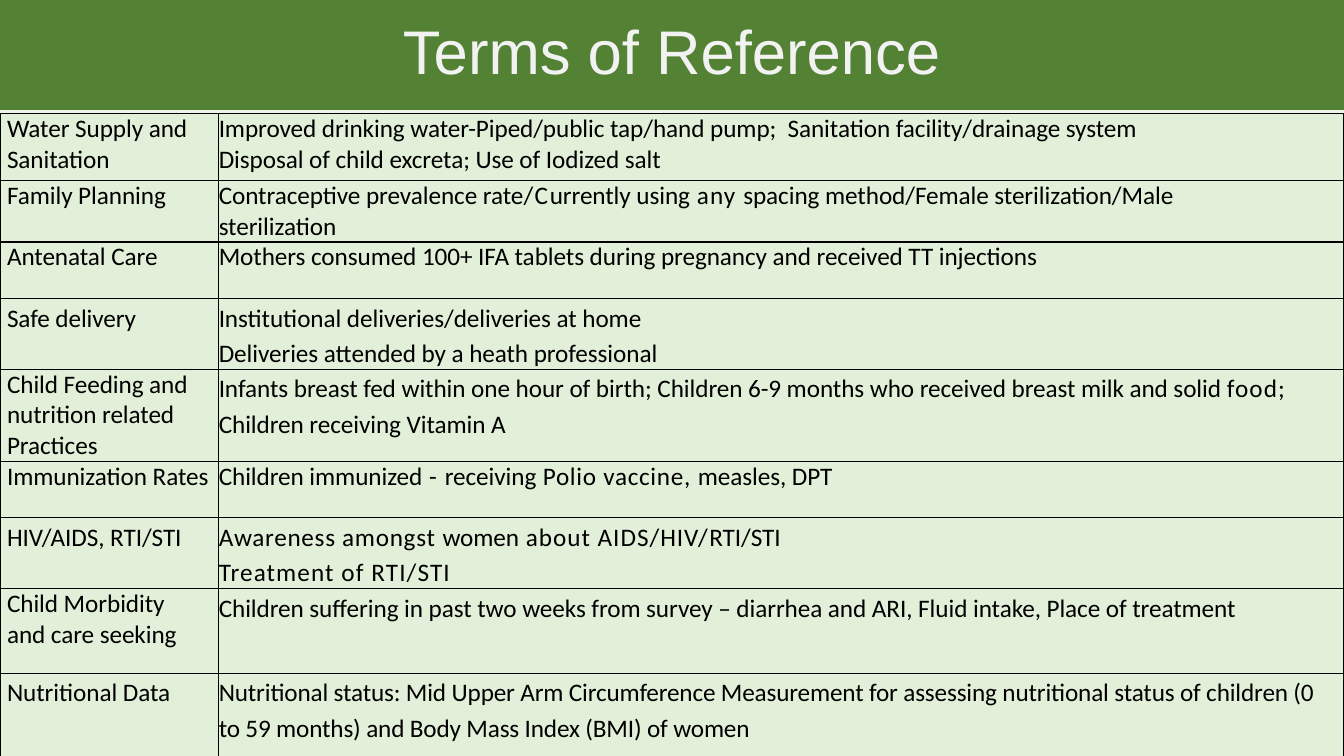
from dataclasses import dataclass
from typing import Any

from lxml.etree import SubElement
from pptx import Presentation
from pptx.dml.color import RGBColor
from pptx.enum.text import MSO_ANCHOR, PP_ALIGN
from pptx.oxml.ns import qn
from pptx.util import Emu, Inches, Pt

GREEN = RGBColor(0x54, 0x82, 0x35)
PALE = RGBColor(0xE2, 0xF0, 0xD9)
MIST = RGBColor(0xED, 0xF5, 0xE7)
WHITE = RGBColor(0xF2, 0xF2, 0xF2)
BLACK = RGBColor(0, 0, 0)

COLS, ROWS = 1333, 750
UNIT = Inches(0.01)
LABEL = 217
TOP = 113
INDENT = 7
LOOSE = 1.15


@dataclass(frozen=True)
class Span:
    text: str
    gap: float = -0.05


@dataclass(frozen=True)
class Cell:
    lines: tuple[tuple[Span, ...], ...]
    lead: float = 1.0
    pad: int = 0


@dataclass(frozen=True)
class Row:
    high: int
    label: Cell
    terms: Cell


def grid(count: int) -> Emu:
    return Emu(UNIT * count)


def plain(*texts: str, lead: float = 1.0, pad: int = 0, gap: float = -0.05) -> Cell:
    return Cell(tuple((Span(text, gap),) for text in texts), lead, pad)


def style(item: Any, form: dict[str, Any]) -> None:
    for name, value in form.items():
        setattr(item, name, value)


def paint(item: Any, color: RGBColor) -> None:
    item.fill.solid()
    item.fill.fore_color.rgb = color


def edge(cell: Any) -> None:
    props = cell._tc.get_or_add_tcPr()
    for side in ("lnL", "lnR", "lnT", "lnB"):
        line = SubElement(props, qn(f"a:{side}"), w=str(Pt(1)))
        fill = SubElement(line, qn("a:solidFill"))
        SubElement(fill, qn("a:srgbClr"), val=str(BLACK))


def write(box: Any, cell: Cell, left: int) -> None:
    edge(box)
    paint(box, PALE)
    style(box, {
        "margin_left": grid(left), "margin_right": grid(cell.pad),
        "margin_top": 0, "margin_bottom": 0, "vertical_anchor": MSO_ANCHOR.TOP,
    })
    frame = box.text_frame
    for spot, line in enumerate(cell.lines):
        para = frame.add_paragraph() if spot else frame.paragraphs[0]
        para.line_spacing = cell.lead
        for span in line:
            run = para.add_run()
            run.text = span.text
            style(run.font, {"name": "Calibri", "size": Pt(18)})
            run.font.color.rgb = BLACK
            run.font._element.set("spc", str(round(span.gap * 100)))


def head(slide: Any, text: str) -> None:
    title = slide.shapes.title
    style(title, {"left": 0, "top": 0, "width": grid(COLS), "height": grid(109)})
    paint(title, GREEN)
    frame = title.text_frame
    style(frame, {"text": text, "vertical_anchor": MSO_ANCHOR.MIDDLE, "word_wrap": True})
    para = frame.paragraphs[0]
    style(para, {"alignment": PP_ALIGN.CENTER, "line_spacing": 0.9})
    style(para.runs[0].font, {"name": "Arial", "size": Pt(44), "bold": False})
    para.runs[0].font.color.rgb = WHITE


def chart(slide: Any, rows: tuple[Row, ...]) -> None:
    high = sum(row.high for row in rows)
    table = slide.shapes.add_table(
        len(rows), 2, 0, grid(TOP), grid(COLS), grid(high)
    ).table
    style(table, {"first_row": False, "horz_banding": False})
    for spot, wide in enumerate((LABEL, COLS - LABEL)):
        table.columns[spot].width = grid(wide)
    for spot, row in enumerate(rows):
        table.rows[spot].height = grid(row.high)
        write(table.cell(spot, 0), row.label, INDENT)
        write(table.cell(spot, 1), row.terms, 0)


TERMS = (
    Row(66, plain("Water Supply and Sanitation"), plain(
        "Improved drinking water-Piped/public tap/hand pump;  Sanitation facility/drainage system",
        "Disposal of child excreta; Use of Iodized salt")),
    Row(55, plain("Family Planning"), Cell(((
        Span("Contraceptive prevalence rate"), Span("/C", 1.1), Span("urrently using"),
        Span(" any ", 0.8),
        Span("spacing method/Female sterilization/Male sterilization")),), pad=70)),
    Row(56, plain("Antenatal Care"), plain(
        "Mothers consumed 100+ IFA tablets during pregnancy and received TT injections")),
    Row(56, plain("Safe delivery", lead=LOOSE), plain(
        "Institutional deliveries/deliveries at home",
        "Deliveries attended by a heath professional", lead=LOOSE)),
    Row(84, plain("Child Feeding and nutrition related Practices"), Cell(((
        Span("Infants breast fed within one hour of birth; Children 6-9 months "
             "who received breast milk and solid "),
        Span("food; ", 0.8), Span("Children receiving Vitamin A")),), LOOSE)),
    Row(56, plain("Immunization Rates"), Cell(((
        Span("Children immunized"), Span(" - ", 0.8), Span("receiving"),
        Span(" Polio vaccine, ", 0.5), Span("measles, DPT")),))),
    Row(56, plain("HIV/AIDS, RTI/STI", lead=LOOSE), Cell((
        (Span("Awareness amongst ", 0.5), Span("women"),
         Span(" about AIDS/HIV/", 0.7), Span("RTI/STI")),
        (Span("Treatment of RTI/STI", 0.8),)), LOOSE)),
    Row(84, plain("Child Morbidity and care seeking", pad=15), plain(
        "Children suffering in past two weeks from survey – diarrhea and ARI, "
        "Fluid intake, Place of treatment", lead=LOOSE)),
    Row(103, plain("Nutritional Data", lead=LOOSE), plain(
        "Nutritional status: Mid Upper Arm Circumference Measurement for assessing "
        "nutritional status of children (0 to 59 months) and Body Mass Index (BMI) of women",
        lead=LOOSE, pad=20, gap=-0.1)),
)


def main() -> None:
    deck = Presentation()
    style(deck, {"slide_width": grid(COLS), "slide_height": grid(ROWS)})
    slide = deck.slides.add_slide(deck.slide_layouts[5])
    paint(slide.background, MIST)
    head(slide, "Terms of Reference")
    chart(slide, TERMS)
    deck.save("out.pptx")


if __name__ == "__main__":
    main()
